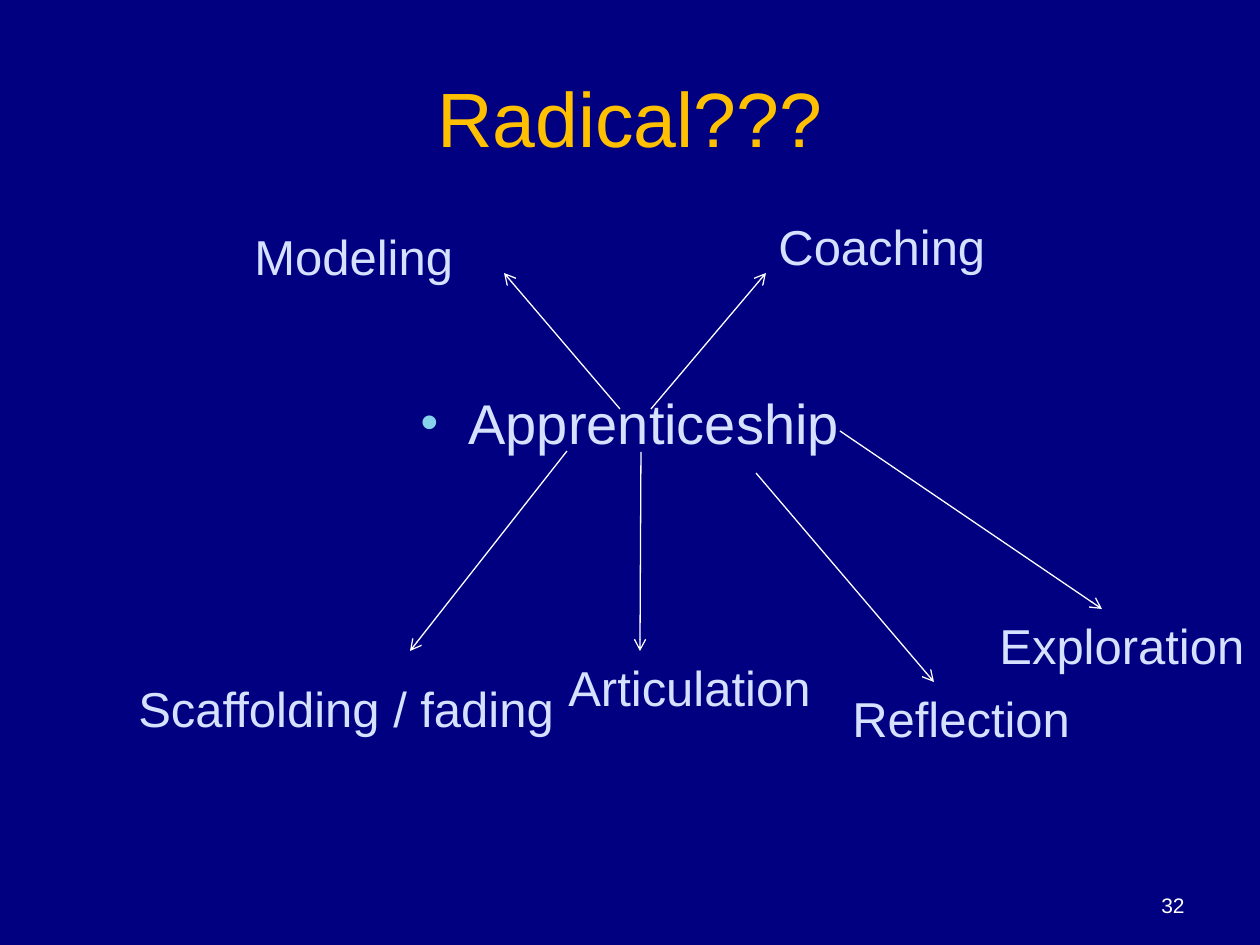
import pptx
import pptx.dml.color
import pptx.enum.shapes
import pptx.enum.text
import pptx.oxml.ns
import pptx.util
from lxml import etree

EMU_PER_PX = 914400 / 126
NAVY, GOLD, PALE, SKY, WHITE = "000080", "FFC000", "D6E0FF", "86D1EC", "FFFFFF"
ALIGN = pptx.enum.text.PP_ALIGN
ANCHOR = pptx.enum.text.MSO_ANCHOR
LABEL_HEIGHT = 72

PRACTICES = [
    ("Modeling", 242, 220, 252),
    ("Coaching", 766, 210, 236),
    ("Scaffolding / fading", 126, 672, 446),
    ("Articulation", 556, 651, 272),
    ("Reflection", 840, 682, 246),
    ("Exploration", 987, 609, 273),
]
ARROWS = [
    ((567, 451), (410, 651)),
    ((756, 473), (934, 682)),
    ((840, 431), (1102, 609)),
    ((620, 409), (504, 273)),
    ((651, 409), (766, 273)),
    ((641, 452), (640, 651)),
]


def px(length):
    """Turn pixels into EMU."""
    return pptx.util.Emu(round(length * EMU_PER_PX))


def color(value):
    """Turn a hex string into a colour."""
    return pptx.dml.color.RGBColor.from_string(value)


def add_child(parent, tag, **attributes):
    """Append a DrawingML element and return it."""
    return etree.SubElement(parent, pptx.oxml.ns.qn(tag), attributes)


def add_bullet(paragraph, hang, tint):
    """Give a paragraph a hanging round bullet."""
    properties = paragraph._p.get_or_add_pPr()
    properties.set("marL", str(px(hang)))
    properties.set("indent", str(-px(hang)))
    add_child(add_child(properties, "a:buClr"), "a:srgbClr", val=tint)
    add_child(properties, "a:buSzPct", val="90000")
    add_child(properties, "a:buFont", typeface="Arial")
    add_child(properties, "a:buChar", char="•")


def add_text(slide, text, left, top, width, height, size=28, tint=PALE,
             align=ALIGN.LEFT, anchor=ANCHOR.TOP, bullet=False):
    """Add a one-paragraph text box."""
    frame = slide.shapes.add_textbox(px(left), px(top), px(width), px(height)).text_frame
    frame.word_wrap = True
    frame.vertical_anchor = anchor
    paragraph = frame.paragraphs[0]
    paragraph.alignment = align
    if bullet:
        add_bullet(paragraph, 48, SKY)
    run = paragraph.add_run()
    run.text = text
    run.font.name = "Arial"
    run.font.size = pptx.util.Pt(size)
    run.font.color.rgb = color(tint)


def add_arrow(slide, start, end):
    """Add a thin white line with an open arrowhead at its end."""
    arrow = slide.shapes.add_connector(
        pptx.enum.shapes.MSO_CONNECTOR.STRAIGHT, *map(px, start + end))
    arrow.line.color.rgb = color(WHITE)
    arrow.line.width = pptx.util.Pt(0.75)
    add_child(arrow.line._get_or_add_ln(), "a:tailEnd", type="arrow")
    add_child(arrow._element.spPr, "a:effectLst")


def main():
    """Build and save the apprenticeship slide."""
    deck = pptx.Presentation()
    deck.slide_width, deck.slide_height = px(1260), px(945)
    slide = deck.slides.add_slide(deck.slide_layouts[6])
    slide.background.fill.solid()
    slide.background.fill.fore_color.rgb = color(NAVY)

    add_text(slide, "Radical???", 63, 38, 1134, 158, size=44, tint=GOLD,
             align=ALIGN.CENTER, anchor=ANCHOR.MIDDLE)
    add_text(slide, "Apprenticeship", 63, 382, 1134, 76, size=32,
             align=ALIGN.CENTER, bullet=True)
    add_text(slide, "32", 903, 861, 294, 63, size=12, tint=WHITE,
             align=ALIGN.RIGHT, anchor=ANCHOR.BOTTOM)
    for start, end in ARROWS:
        add_arrow(slide, start, end)
    for practice, left, top, width in PRACTICES:
        add_text(slide, practice, left, top, width, LABEL_HEIGHT)
    deck.save("out.pptx")


if __name__ == "__main__":
    main()
